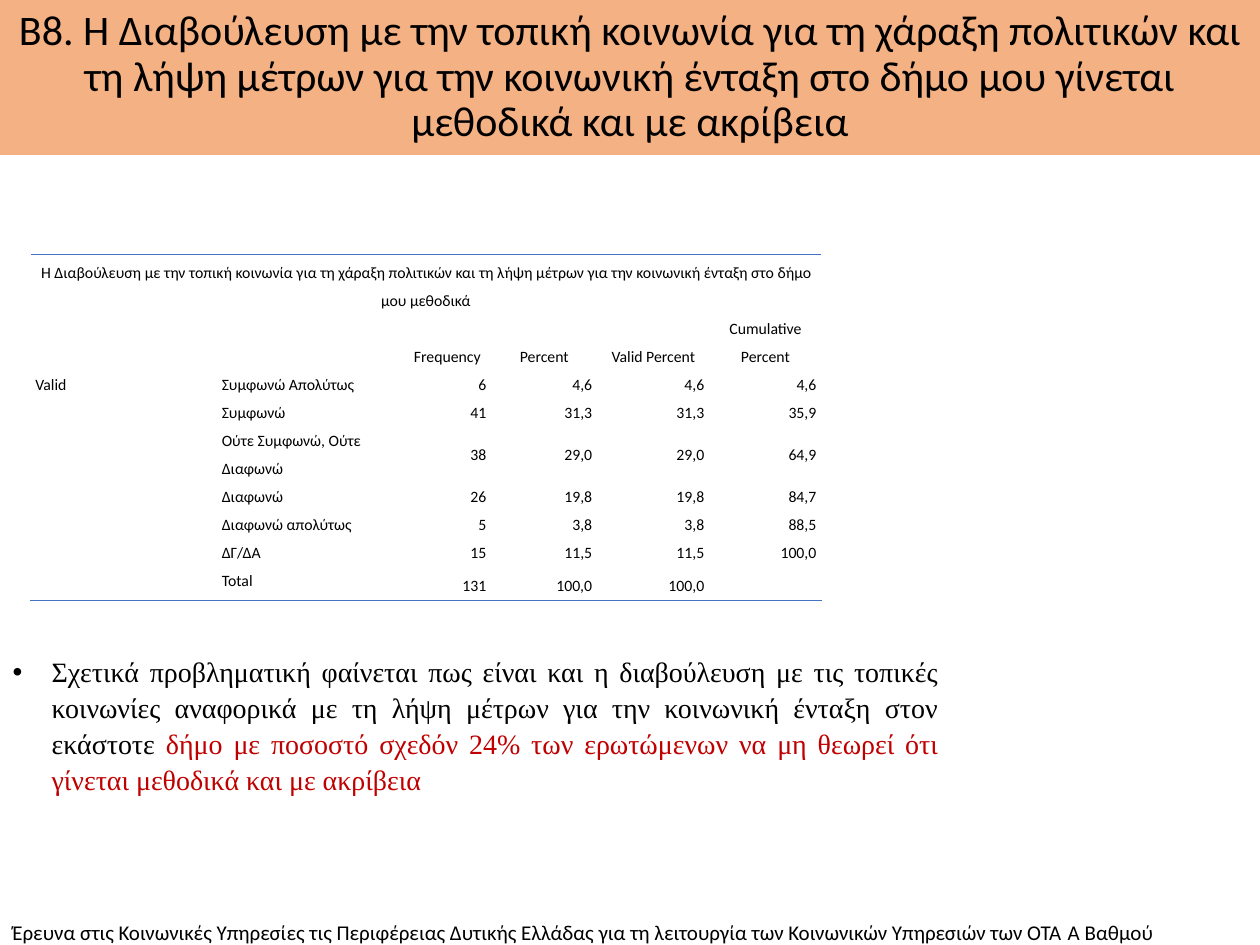
"""Build the survey slide on consultation with the local community."""
from pptx import Presentation
from pptx.dml.color import RGBColor
from pptx.enum.text import MSO_ANCHOR as Anchor, MSO_AUTO_SIZE as Auto, PP_ALIGN as Align
from pptx.oxml import parse_xml
from pptx.oxml.ns import nsdecls
from pptx.util import Inches, Pt

BLACK = RGBColor(0x00, 0x00, 0x00)
RED = RGBColor(0xC0, 0x00, 0x00)
PEACH = RGBColor(0xF4, 0xB1, 0x83)
BLUE = RGBColor(0x44, 0x72, 0xC4)


def write(para, text, size, name="Calibri", color=BLACK, **form):
    run = para.add_run()
    run.text = text
    run.font.size, run.font.name = Pt(size), name
    run.font.color.rgb = color
    for key, val in form.items():
        setattr(para, key, val)


def rule(cell, side):
    cell._tc.get_or_add_tcPr().insert(0, parse_xml(
        f'<a:{side} {nsdecls("a")} w="{Pt(1)}"><a:solidFill>'
        f'<a:srgbClr val="{BLUE}"/></a:solidFill></a:{side}>'))


deck = Presentation()
deck.slide_width, deck.slide_height = Inches(10), Inches(7.5)
slide = deck.slides.add_slide(deck.slide_layouts[1])
title, body = slide.placeholders
foot = slide.shapes.add_textbox(0, 0, 0, 0)

boxes = [
    (title, (0, 0, 10, 1.23), Anchor.MIDDLE, Auto.NONE),
    (body, (0, 5.13, 7.55, 1.24), Anchor.MIDDLE, Auto.SHAPE_TO_FIT_TEXT),
    (foot, (0, 7.25, 9.83, 0.3), Anchor.TOP, Auto.SHAPE_TO_FIT_TEXT),
]
for box, place, anchor, fit in boxes:
    for key, val in zip(("left", "top", "width", "height"), place):
        setattr(box, key, Inches(val))
    form = {"word_wrap": True, "vertical_anchor": anchor, "auto_size": fit}
    for key, val in form.items():
        setattr(box.text_frame, key, val)

title.fill.solid()
title.fill.fore_color.rgb = PEACH
write(title.text_frame.paragraphs[0],
      "Β8. Η Διαβούλευση με την τοπική κοινωνία για τη χάραξη πολιτικών και τη λήψη "
      "μέτρων για την κοινωνική ένταξη στο δήμο μου γίνεται μεθοδικά και με ακρίβεια",
      24, alignment=Align.CENTER, line_spacing=0.9)

write(foot.text_frame.paragraphs[0],
      "Έρευνα στις Κοινωνικές Υπηρεσίες τις Περιφέρειας Δυτικής Ελλάδας για τη "
      "λειτουργία των Κοινωνικών Υπηρεσιών των ΟΤΑ Ά Βαθμού", 12)

point = body.text_frame.paragraphs[0]
props = point._p.get_or_add_pPr()
props.set("marL", str(Inches(0.31)))
props.set("indent", str(Inches(-0.31)))
write(point,
      "Σχετικά προβληματική φαίνεται πως είναι και η διαβούλευση με τις τοπικές "
      "κοινωνίες αναφορικά με τη λήψη μέτρων για την κοινωνική ένταξη στον εκάστοτε ",
      16, "Times New Roman", alignment=Align.JUSTIFY, line_spacing=1.07,
      space_before=Pt(0), space_after=Pt(8))
write(point,
      "δήμο με ποσοστό σχεδόν 24% των ερωτώμενων να μη θεωρεί ότι γίνεται "
      "μεθοδικά και με ακρίβεια", 16, "Times New Roman", RED)

rows = [
    ("Η Διαβούλευση με την τοπική κοινωνία για τη χάραξη πολιτικών και τη λήψη μέτρων "
     "για την κοινωνική ένταξη στο δήμο μου μεθοδικά", "", "", "", "", ""),
    ("", "", "Frequency", "Percent", "Valid Percent", "Cumulative Percent"),
    ("Valid", "Συμφωνώ Απολύτως", "6", "4,6", "4,6", "4,6"),
    ("", "Συμφωνώ", "41", "31,3", "31,3", "35,9"),
    ("", "Ούτε Συμφωνώ, Ούτε Διαφωνώ", "38", "29,0", "29,0", "64,9"),
    ("", "Διαφωνώ", "26", "19,8", "19,8", "84,7"),
    ("", "Διαφωνώ απολύτως", "5", "3,8", "3,8", "88,5"),
    ("", "ΔΓ/ΔΑ", "15", "11,5", "11,5", "100,0"),
    ("", "Total", "131", "100,0", "100,0", ""),
]
lines = (2, 2, 1, 1, 2, 1, 1, 1, 1)
widths = (1.48, 1.48, 0.7, 0.84, 0.89, 0.89)
last = len(rows) - 1

grid = slide.shapes.add_table(len(rows), len(widths), Inches(0.24), Inches(2.02),
                              Inches(sum(widths)), Pt(16 * sum(lines))).table
grid.first_row = grid.horz_banding = False
for col, width in zip(grid.columns, widths):
    col.width = Inches(width)
for row, count in zip(grid.rows, lines):
    row.height = Pt(16 * count)

for r, texts in enumerate(rows):
    for c, text in enumerate(texts):
        cell = grid.cell(r, c)
        cell.fill.background()
        for side in ("left", "right", "top", "bottom"):
            setattr(cell, f"margin_{side}", 0)
        if r < 2:
            align, anchor = Align.CENTER, Anchor.BOTTOM if r else Anchor.MIDDLE
        elif c < 2:
            align, anchor = Align.LEFT, Anchor.TOP
        else:
            align, anchor = Align.RIGHT, Anchor.MIDDLE
        cell.vertical_anchor = anchor
        para = cell.text_frame.paragraphs[0]
        form = {"alignment": align, "line_spacing": Pt(16), "space_after": Pt(8)}
        for key, val in form.items():
            setattr(para, key, val)
        for side in ("marL", "marR"):
            para._p.get_or_add_pPr().set(side, str(Inches(0.04)))
        if text:
            write(para, text, 9)
        if r == 0:
            rule(cell, "lnT")
        if r == last or text == "Valid":
            rule(cell, "lnB")

for start, end in (((0, 0), (0, 5)), ((1, 0), (1, 1)), ((2, 0), (last, 0))):
    grid.cell(*start).merge(grid.cell(*end))

deck.save("out.pptx")
